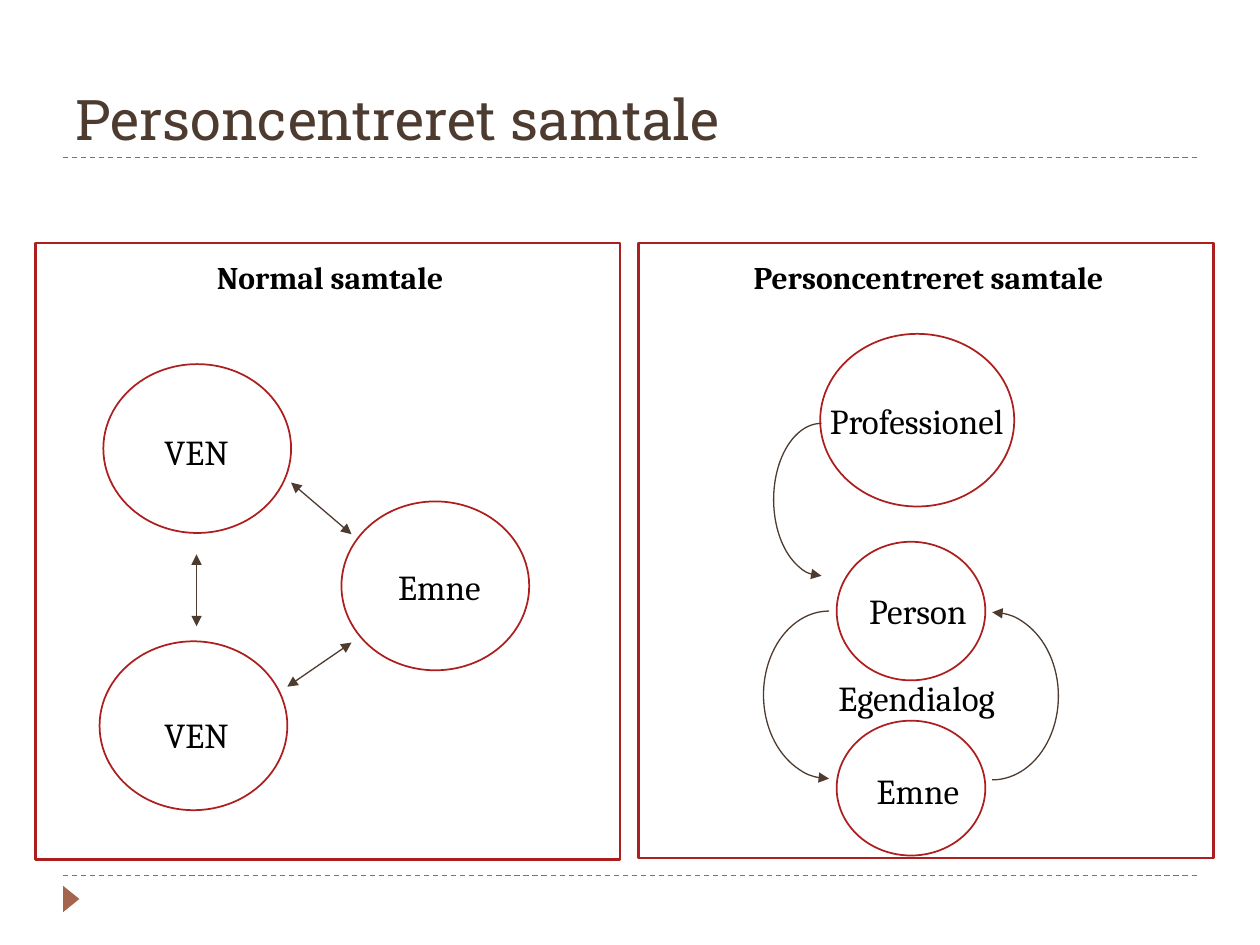
from pptx import Presentation
from pptx import util as u
from pptx.dml.color import RGBColor
from pptx.enum import dml, shapes, text
from pptx.oxml.ns import qn
from lxml import etree

BLACK = RGBColor(0x00, 0x00, 0x00)
BROWN = RGBColor(0x4E, 0x3B, 0x30)
CLAY = RGBColor(0xA5, 0x64, 0x4E)
RED = RGBColor(0xAD, 0x1F, 0x1F)
KIND = shapes.MSO_SHAPE
ALIGN = text.PP_ALIGN


class Board:
    font = "Cambria"
    thin = 0.75

    def __init__(self, slide):
        self.slide = slide

    def shape(self, kind, box, line=None, width=1, fill=None):
        item = self.slide.shapes.add_shape(kind, *map(u.Inches, box))
        item.shadow.inherit = False
        if fill is None:
            item.fill.background()
        else:
            item.fill.solid()
            item.fill.fore_color.rgb = fill
        if line is None:
            item.line.fill.background()
        else:
            item.line.color.rgb = line
            item.line.width = u.Pt(width)
        return item

    def letter(self, frame, words, size, color=BLACK, font=None, bold=False,
               align=ALIGN.CENTER):
        para = frame.paragraphs[0]
        para.text = words
        para.alignment = align
        para.font.name = font or self.font
        para.font.size = u.Pt(size)
        para.font.bold = bold
        para.font.color.rgb = color

    def inset(self, frame, left, top, right, bottom):
        frame.margin_left, frame.margin_top = u.Inches(left), u.Inches(top)
        frame.margin_right, frame.margin_bottom = u.Inches(right), u.Inches(bottom)

    def title(self, words, box):
        frame = self.slide.shapes.add_textbox(*map(u.Inches, box)).text_frame
        frame.word_wrap = True
        frame.vertical_anchor = text.MSO_ANCHOR.BOTTOM
        self.letter(frame, words, 32, BROWN, "Roboto Slab", align=ALIGN.LEFT)

    def label(self, words, left, top, width, align=ALIGN.CENTER):
        box = self.slide.shapes.add_textbox(*map(u.Inches, (left, top, width, 0.34)))
        box.text_frame.word_wrap = True
        self.inset(box.text_frame, 0, 0, 0, 0)
        self.letter(box.text_frame, words, 20, align=align)

    def panel(self, words, box):
        frame = self.shape(KIND.RECTANGLE, box, RED, 1.5).text_frame
        frame.word_wrap = True
        frame.vertical_anchor = text.MSO_ANCHOR.TOP
        self.inset(frame, 0.16, 0.12, 0.12, 0.12)
        self.letter(frame, words, 18, bold=True)

    def tips(self, item, *ends):
        line = item.line._get_or_add_ln()
        for end in ends:
            etree.SubElement(line, qn(f"a:{end}"), type="triangle")

    def line(self, start, end, color):
        item = self.slide.shapes.add_connector(
            shapes.MSO_CONNECTOR.STRAIGHT, *map(u.Inches, start + end))
        item.line.color.rgb = color
        item.line.width = u.Pt(self.thin)
        etree.SubElement(item._element.spPr, qn("a:effectLst"))
        return item

    def rule(self, y):
        self.line((0.5, y), (9.5, y), CLAY).line.dash_style = dml.MSO_LINE.DASH

    def link(self, start, end):
        self.tips(self.line(start, end, BROWN), "headEnd", "tailEnd")

    def arc(self, box, start, stop):
        item = self.shape(KIND.ARC, box, BROWN, self.thin)
        # Angles are stored in 60000ths of a degree, scaled by 100000
        item.adjustments[0] = start * 0.6
        item.adjustments[1] = stop * 0.6
        self.tips(item, "headEnd")


def main():
    deck = Presentation()
    deck.slide_width, deck.slide_height = u.Inches(10), u.Inches(7.5)
    board = Board(deck.slides.add_slide(deck.slide_layouts[6]))

    # Frame and title
    board.rule(6.95)
    board.rule(1.25)
    mark = board.shape(KIND.ISOSCELES_TRIANGLE, (0.46, 7.07, 0.21, 0.13), fill=CLAY)
    mark.rotation = 90
    board.title("Personcentreret samtale", (0.5, 0.25, 9, 1))

    # Panels
    board.panel("Normal samtale", (0.28, 1.93, 4.64, 4.89))
    board.panel("Personcentreret samtale", (5.07, 1.93, 4.56, 4.88))

    # Normal talk: three equal circles, linked both ways
    for left, top in ((2.71, 3.98), (0.82, 2.89), (0.79, 5.09)):
        board.shape(KIND.OVAL, (left, top, 1.49, 1.34), RED)
    board.link((2.28, 5.45), (2.79, 5.1))
    board.link((1.56, 4.97), (1.56, 4.4))
    board.link((2.31, 3.83), (2.79, 4.24))
    for top in (3.42, 5.66):
        board.label("VEN", 0.29, top, 2.54)
    board.label("Emne", 3.16, 4.49, 2.36, ALIGN.LEFT)

    # Person-centred talk: a column of circles
    for box in ((6.64, 5.72, 1.18, 1.07), (6.51, 2.65, 1.54, 1.37),
                (6.64, 4.3, 1.18, 1.1)):
        board.shape(KIND.OVAL, box, RED)
    for words, left, top in (("Emne", 5.96, 6.11), ("Egendialog", 5.95, 5.37),
                             ("Person", 5.96, 4.68), ("Professionel", 5.95, 3.17)):
        board.label(words, left, top, 2.65)

    # Curved arrows, left halves then the right half
    board.arc((6.14, 3.36, 0.76, 1.21), 90, 270)
    board.arc((6.06, 4.85, 1.04, 1.33), 90, 270)
    board.arc((7.35, 4.86, 1.05, 1.33), 270, 90)

    deck.save("out.pptx")


if __name__ == "__main__":
    main()
